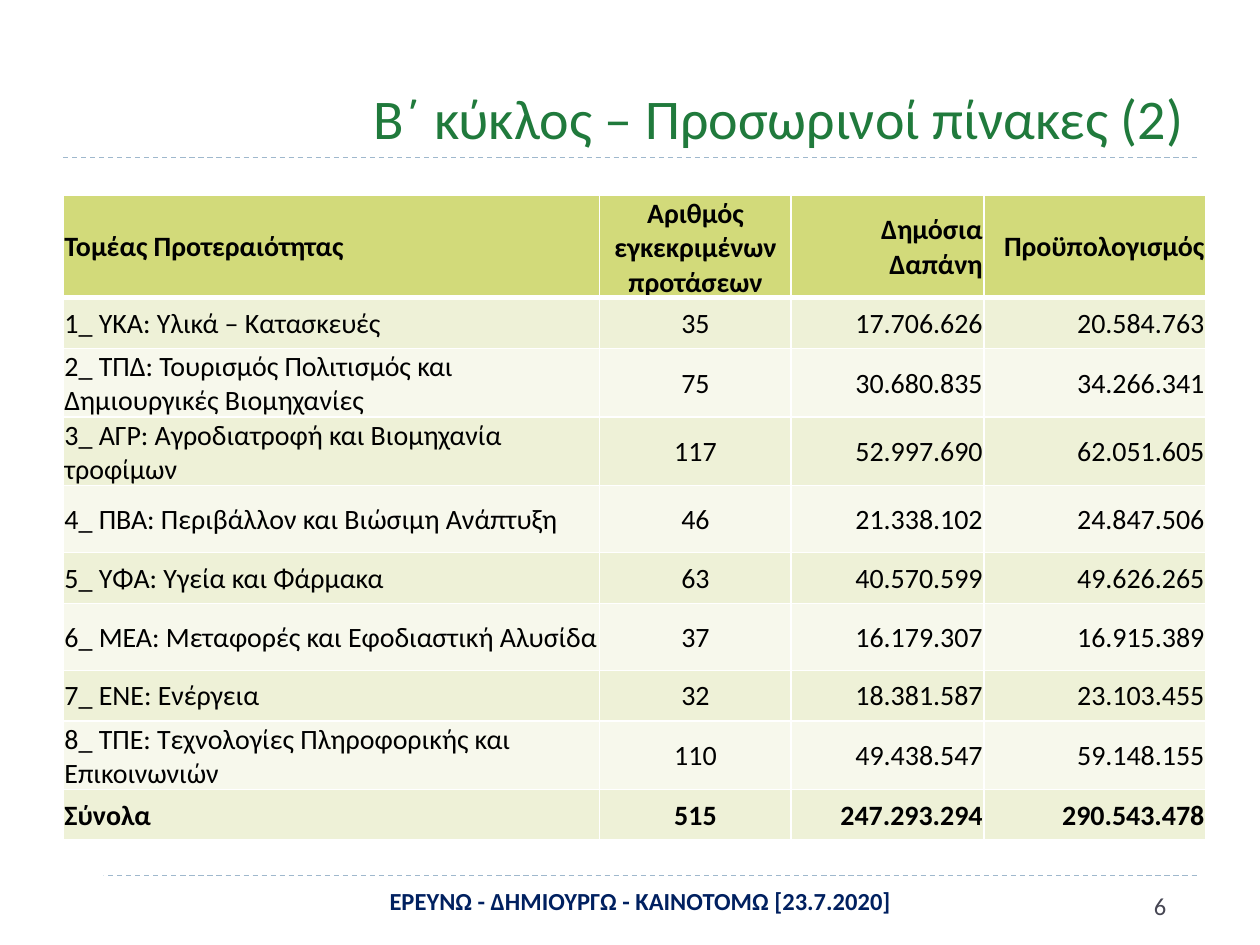
from dataclasses import dataclass

from lxml import etree
from pptx import Presentation
from pptx.dml.color import RGBColor
from pptx.enum import dml, shapes, text
from pptx.oxml import ns
from pptx.util import Cm, Pt


@dataclass(frozen=True)
class Theme:
    font: str = "Calibri"
    title_size: int = 32
    table_size: int = 16
    footer_size: int = 14
    title: str = "207A3C"
    body: str = "000000"
    footer: str = "002060"
    number: str = "464653"
    rule: str = "9FB8CD"
    white: str = "FFFFFF"
    header: str = "D2DA7A"
    bands: tuple = ("EEF1D7", "F7F8EC")


THEME = Theme()
LEFT, CENTER, RIGHT = text.PP_ALIGN.LEFT, text.PP_ALIGN.CENTER, text.PP_ALIGN.RIGHT

ALIGNMENTS = (LEFT, CENTER, RIGHT, RIGHT)
COLUMN_WIDTHS = (10.82, 3.86, 3.89, 4.47)
HEADER_HEIGHT, SINGLE, DOUBLE = 2.03, 1.02, 1.35
ROW_HEIGHTS = (HEADER_HEIGHT, SINGLE, DOUBLE, DOUBLE, DOUBLE,
               SINGLE, DOUBLE, SINGLE, DOUBLE, SINGLE)
ROWS = (
    ("Τομέας Προτεραιότητας", "Αριθμός εγκεκριμένων προτάσεων",
     "Δημόσια Δαπάνη", "Προϋπολογισμός"),
    ("1_ ΥΚΑ: Υλικά – Κατασκευές", "35", "17.706.626", "20.584.763"),
    ("2_ ΤΠΔ: Τουρισμός Πολιτισμός και Δημιουργικές Βιομηχανίες",
     "75", "30.680.835", "34.266.341"),
    ("3_ ΑΓΡ: Αγροδιατροφή και Βιομηχανία τροφίμων",
     "117", "52.997.690", "62.051.605"),
    ("4_ ΠΒΑ: Περιβάλλον και Βιώσιμη Ανάπτυξη",
     "46", "21.338.102", "24.847.506"),
    ("5_ ΥΦΑ: Υγεία και Φάρμακα", "63", "40.570.599", "49.626.265"),
    ("6_ ΜΕΑ: Μεταφορές και Εφοδιαστική Αλυσίδα",
     "37", "16.179.307", "16.915.389"),
    ("7_ ΕΝΕ: Ενέργεια", "32", "18.381.587", "23.103.455"),
    ("8_ ΤΠΕ: Τεχνολογίες Πληροφορικής και Επικοινωνιών",
     "110", "49.438.547", "59.148.155"),
    ("Σύνολα", "515", "247.293.294", "290.543.478"),
)


def write(frame, words, size, color, align=LEFT, bold=False):
    frame.word_wrap = True
    para = frame.paragraphs[0]
    para.alignment = align
    span = para.add_run()
    span.text = words
    span.font.name = THEME.font
    span.font.size = Pt(size)
    span.font.bold = bold
    span.font.color.rgb = RGBColor.from_string(color)


def add_rule(page, left, top, width):
    rule = page.shapes.add_connector(shapes.MSO_CONNECTOR.STRAIGHT,
                                     Cm(left), Cm(top), Cm(left + width), Cm(top))
    rule.line.color.rgb = RGBColor.from_string(THEME.rule)
    rule.line.width = Pt(0.75)
    rule.line.dash_style = dml.MSO_LINE.DASH
    etree.SubElement(rule._element.spPr, ns.qn("a:effectLst"))


def add_title(page, left, top, width, height):
    """Fill the title placeholder and underline it across the page margins."""
    title = page.shapes.title
    title.left, title.top, title.width, title.height = map(Cm, (left, top, width, height))
    title.text_frame.vertical_anchor = text.MSO_ANCHOR.BOTTOM
    write(title.text_frame, "Β΄ κύκλος – Προσωρινοί πίνακες (2)",
          THEME.title_size, THEME.title, RIGHT)
    add_rule(page, 1.27, top + height, left + width - 1.27)


def set_borders(cell, bottom_width):
    properties = cell._tc.get_or_add_tcPr()
    widths = {"lnL": 1, "lnR": 1, "lnT": 1, "lnB": bottom_width}
    for index, (side, width) in enumerate(widths.items()):
        border = etree.Element(ns.qn(f"a:{side}"), w=str(Pt(width)))
        fill = etree.SubElement(border, ns.qn("a:solidFill"))
        etree.SubElement(fill, ns.qn("a:srgbClr"), val=THEME.white)
        properties.insert(index, border)


def fill_cell(cell, words, align, bold, color, bottom_width):
    cell.margin_left = cell.margin_right = cell.margin_top = Cm(0.03)
    cell.margin_bottom = 0
    cell.vertical_anchor = text.MSO_ANCHOR.MIDDLE
    cell.fill.solid()
    cell.fill.fore_color.rgb = RGBColor.from_string(color)
    set_borders(cell, bottom_width)
    write(cell.text_frame, words, THEME.table_size, THEME.body, align, bold)


def add_results_table(page, left, top):
    table = page.shapes.add_table(
        len(ROWS), len(COLUMN_WIDTHS), Cm(left), Cm(top),
        Cm(sum(COLUMN_WIDTHS)), Cm(sum(ROW_HEIGHTS))).table
    for column, width in zip(table.columns, COLUMN_WIDTHS):
        column.width = Cm(width)
    for index, (row, height, values) in enumerate(zip(table.rows, ROW_HEIGHTS, ROWS)):
        row.height = Cm(height)
        is_header = index == 0
        bold = is_header or index == len(ROWS) - 1
        color = THEME.header if is_header else THEME.bands[(index - 1) % 2]
        for cell, words, align in zip(row.cells, values, ALIGNMENTS):
            fill_cell(cell, words, align, bold, color, 3 if is_header else 1)


def add_footer(page, left, top, width):
    """Draw the bottom rule, the block over its left end, and the footer texts."""
    add_rule(page, left, top, width)
    block = page.shapes.add_shape(shapes.MSO_SHAPE.RECTANGLE, Cm(left - 0.18),
                                  Cm(top - 0.25), Cm(1), Cm(1.12))
    block.shadow.inherit = False
    block.fill.solid()
    block.fill.fore_color.rgb = RGBColor.from_string(THEME.white)
    block.line.fill.background()

    caption = page.shapes.add_textbox(Cm(left + 3.84), Cm(top + 0.08), Cm(15.6), Cm(0.79))
    write(caption.text_frame, "ΕΡΕΥΝΩ - ΔΗΜΙΟΥΡΓΩ - ΚΑΙΝΟΤΟΜΩ [23.7.2020]",
          THEME.footer_size, THEME.footer, CENTER, True)
    number = page.shapes.add_textbox(Cm(left + 21.74), Cm(top + 0.18), Cm(1.27), Cm(1.02))
    write(number.text_frame, "6", THEME.footer_size, THEME.number)


def main():
    deck = Presentation()
    deck.slide_width, deck.slide_height = Cm(25.4), Cm(19.05)
    page = deck.slides.add_slide(deck.slide_layouts[5])
    add_footer(page, 1.27, 17.65, 22.86)
    add_title(page, 3.1, 0.43, 21.03, 2.74)
    add_results_table(page, 1.27, 3.94)
    deck.save("out.pptx")


if __name__ == "__main__":
    main()
